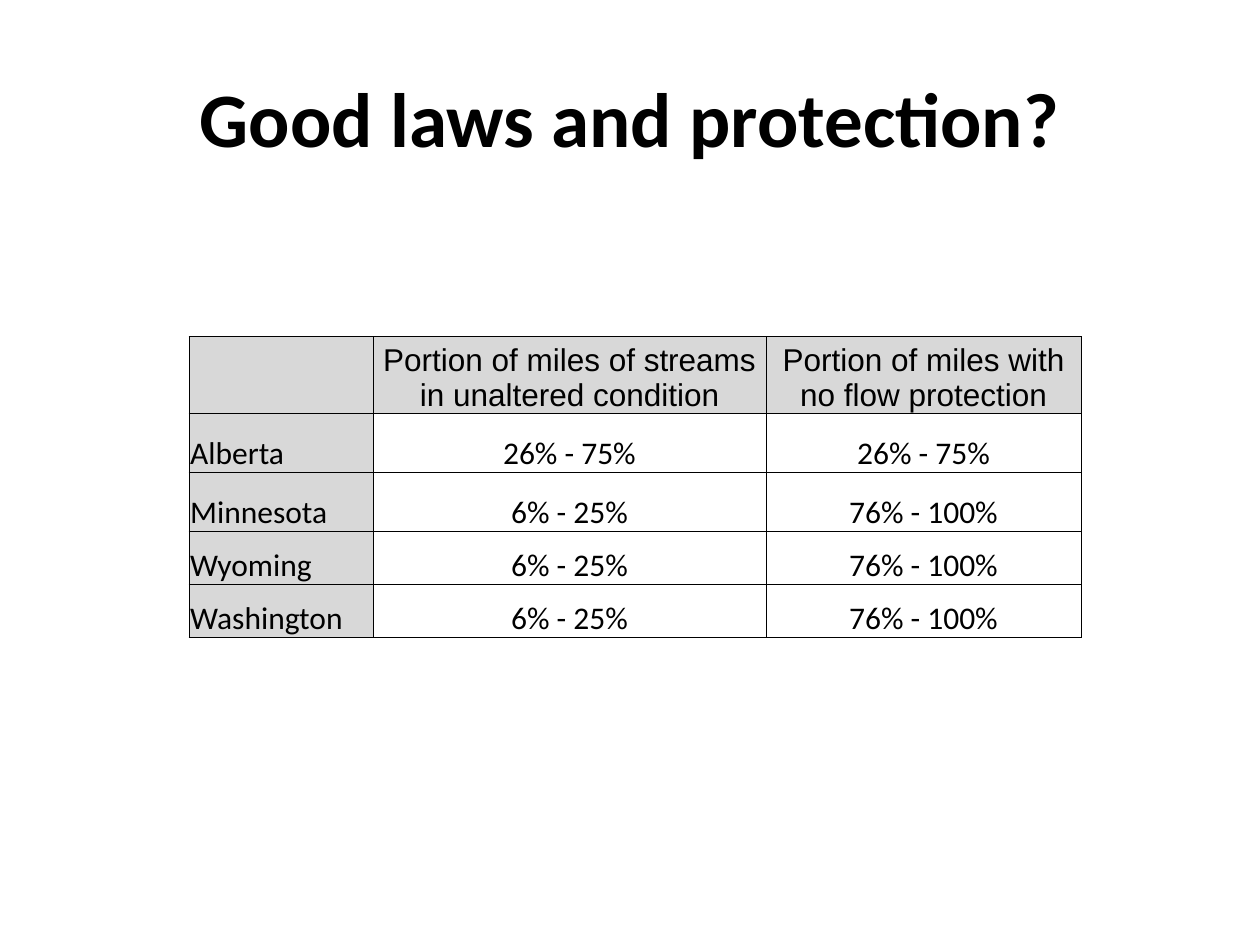
from dataclasses import dataclass

from lxml import etree
from pptx import Presentation
from pptx.dml.color import RGBColor
from pptx.enum.text import MSO_ANCHOR, PP_ALIGN
from pptx.oxml.ns import qn
from pptx.util import Inches, Pt

CENTER, LEFT = PP_ALIGN.CENTER, PP_ALIGN.LEFT
MIDDLE, BOTTOM = MSO_ANCHOR.MIDDLE, MSO_ANCHOR.BOTTOM


@dataclass(frozen=True)
class Theme:
    ink: str = "000000"
    label_fill: str = "D8D8D8"
    body_font: str = "Calibri"
    header_font: str = "Arial"
    title_size: int = 44
    table_size: int = 18
    border_width: float = 0.5


THEME = Theme()

COLUMN_WIDTHS = [1.46, 3.12, 2.5]
ROW_HEIGHTS = [0.61, 0.47, 0.47, 0.42, 0.42]
ROWS = [
    ["", "Portion of miles of streams in unaltered condition",
     "Portion of miles with no flow protection"],
    ["Alberta", "26% - 75%", "26% - 75%"],
    ["Minnesota", "6% - 25%", "76% - 100%"],
    ["Wyoming", "6% - 25%", "76% - 100%"],
    ["Washington", "6% - 25%", "76% - 100%"],
]


def write(paragraph, text, font_name, size, bold=False):
    run = paragraph.add_run()
    run.text = text
    run.font.name = font_name
    run.font.size = Pt(size)
    run.font.bold = bold
    run.font.color.rgb = RGBColor.from_string(THEME.ink)


def add_borders(cell):
    """Draw a thin line on all four sides; lines must precede the fill."""
    properties = cell._tc.get_or_add_tcPr()
    for position, side in enumerate(("a:lnL", "a:lnR", "a:lnT", "a:lnB")):
        line = etree.Element(qn(side), w=str(Pt(THEME.border_width)))
        fill = etree.SubElement(line, qn("a:solidFill"))
        etree.SubElement(fill, qn("a:srgbClr"), val=THEME.ink)
        properties.insert(position, line)


presentation = Presentation()
presentation.slide_width = Inches(10)
presentation.slide_height = Inches(7.5)
slide = presentation.slides.add_slide(presentation.slide_layouts[6])

title = slide.shapes.add_textbox(Inches(0.5), Inches(0.3), Inches(9), Inches(1.25))
title.text_frame.word_wrap = True
title.text_frame.vertical_anchor = MIDDLE
title_paragraph = title.text_frame.paragraphs[0]
title_paragraph.alignment = CENTER
write(title_paragraph, "Good laws and protection?", THEME.body_font,
      THEME.title_size, bold=True)

table = slide.shapes.add_table(
    len(ROWS), len(COLUMN_WIDTHS), Inches(1.5), Inches(2.67),
    Inches(sum(COLUMN_WIDTHS)), Inches(sum(ROW_HEIGHTS))).table
table.first_row = False
table.horz_banding = False
for column, width in zip(table.columns, COLUMN_WIDTHS):
    column.width = Inches(width)
for row, height in zip(table.rows, ROW_HEIGHTS):
    row.height = Inches(height)

for row_index, row_texts in enumerate(ROWS):
    for column_index, text in enumerate(row_texts):
        cell = table.cell(row_index, column_index)
        cell.margin_left = cell.margin_right = cell.margin_top = Inches(0.01)
        cell.margin_bottom = Inches(0)
        cell.vertical_anchor = BOTTOM
        if row_index == 0 or column_index == 0:
            cell.fill.solid()
            cell.fill.fore_color.rgb = RGBColor.from_string(THEME.label_fill)
        else:
            cell.fill.background()
        add_borders(cell)
        if text:
            paragraph = cell.text_frame.paragraphs[0]
            paragraph.alignment = LEFT if column_index == 0 else CENTER
            font_name = THEME.header_font if row_index == 0 else THEME.body_font
            write(paragraph, text, font_name, THEME.table_size)

presentation.save("out.pptx")
